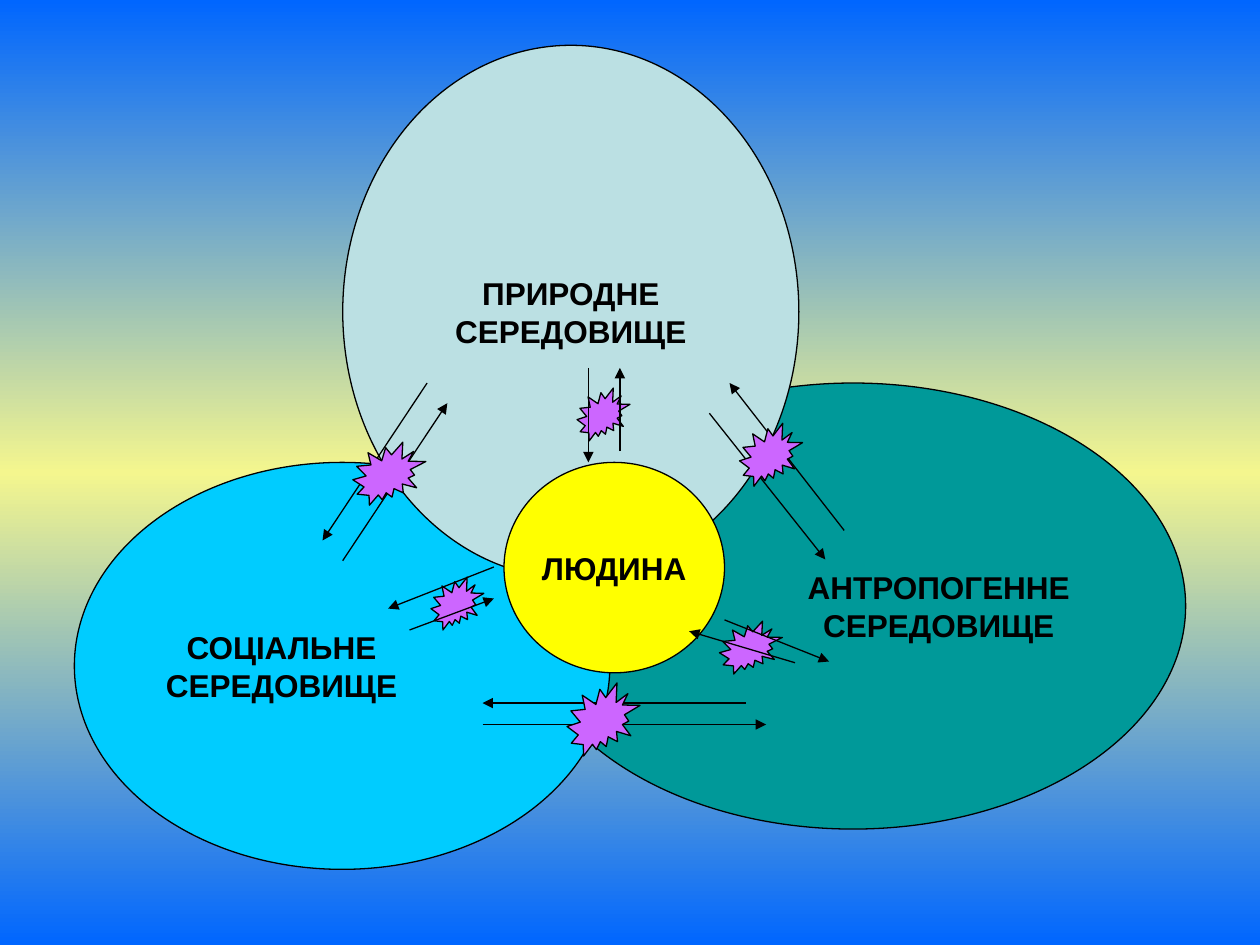
from copy import deepcopy
from dataclasses import dataclass

from lxml.etree import SubElement
from pptx import Presentation
from pptx.dml.color import RGBColor
from pptx.enum.shapes import MSO_CONNECTOR, MSO_SHAPE
from pptx.enum.text import MSO_ANCHOR, PP_ALIGN
from pptx.oxml.ns import qn
from pptx.util import Inches, Pt


@dataclass(frozen=True)
class Theme:
    """Colours, font and sizes of the slide."""
    edge: str = "0066FF"
    glow: str = "F4F68E"
    ink: str = "000000"
    teal: str = "009999"
    sky: str = "00CCFF"
    pale: str = "BBE0E3"
    sun: str = "FFFF00"
    burst: str = "CC66FF"
    font: str = "Arial"
    size: float = 18
    line: float = 0.75


THEME = Theme()

CROSS = [
    (3.83, 5.75, 6.08, 5.75), (5.92, 5.58, 3.83, 5.58),
    (3.39, 3.04, 2.56, 4.29), (2.72, 4.45, 3.55, 3.2),
    (5.63, 3.28, 6.55, 4.44), (6.7, 4.21, 5.79, 3.04),
]
INNER = [
    (4.67, 2.92, 4.67, 3.67), (4.92, 3.58, 4.92, 2.92),
    (3.92, 4.5, 3.08, 4.83), (3.25, 5, 3.92, 4.75),
    (5.75, 4.92, 6.58, 5.25), (6.31, 5.26, 5.47, 5.01),
]
BURSTS = [
    (4.5, 5.42, 0.58, 0.58), (5.87, 3.36, 0.5, 0.5),
    (2.8, 3.51, 0.58, 0.5), (3.42, 4.58, 0.42, 0.42),
    (5.71, 4.93, 0.5, 0.42), (4.58, 3.08, 0.42, 0.42),
]


def paint(slide):
    """Fill the background with a vertical gradient of three stops."""
    fill = slide.background.fill
    fill.gradient()
    fill.gradient_angle = 90
    for stop, place in zip(fill.gradient_stops, (0, 1)):
        stop.color.rgb = RGBColor.from_string(THEME.edge)
        stop.position = place
    stops = slide.element.xpath(".//p:bg//a:gsLst")[0]
    stops.insert(1, deepcopy(stops[0]))
    middle = fill.gradient_stops[1]
    middle.color.rgb = RGBColor.from_string(THEME.glow)
    middle.position = 0.5


def add_form(slide, kind, box, color):
    """Add a filled preset shape with a thin outline."""
    form = slide.shapes.add_shape(kind, *map(Inches, box))
    form.shadow.inherit = False
    form.fill.solid()
    form.fill.fore_color.rgb = RGBColor.from_string(color)
    form.line.color.rgb = RGBColor.from_string(THEME.ink)
    form.line.width = Pt(THEME.line)
    return form


def add_sphere(slide, box, color, text, left=0.1, right=0.1):
    """Add an ellipse with a bold label, moved sideways by its margins."""
    frame = add_form(slide, MSO_SHAPE.OVAL, box, color).text_frame
    frame.word_wrap = False
    frame.vertical_anchor = MSO_ANCHOR.MIDDLE
    frame.margin_left, frame.margin_right = Inches(left), Inches(right)
    frame.text = text
    for para in frame.paragraphs:
        para.alignment = PP_ALIGN.CENTER
        for run in para.runs:
            run.font.name = THEME.font
            run.font.size = Pt(THEME.size)
            run.font.bold = True
            run.font.color.rgb = RGBColor.from_string(THEME.ink)


def add_arrow(slide, ends):
    """Add a thin straight arrow."""
    arrow = slide.shapes.add_connector(MSO_CONNECTOR.STRAIGHT, *map(Inches, ends))
    arrow.line.color.rgb = RGBColor.from_string(THEME.ink)
    arrow.line.width = Pt(THEME.line)
    props = arrow.element.spPr
    SubElement(props.find(qn("a:ln")), qn("a:tailEnd"), type="triangle")
    SubElement(props, qn("a:effectLst"))


def main():
    """Build and save the slide."""
    deck = Presentation()
    deck.slide_width, deck.slide_height = Inches(10), Inches(7.5)
    slide = deck.slides.add_slide(deck.slide_layouts[6])
    paint(slide)
    add_sphere(slide, (4.13, 3.04, 5.28, 3.54), THEME.teal,
               "АНТРОПОГЕННЕ\nСЕРЕДОВИЩЕ", left=1.46)
    add_sphere(slide, (0.59, 3.67, 4.25, 3.23), THEME.sky,
               "СОЦІАЛЬНЕ\nСЕРЕДОВИЩЕ", right=1.06)
    add_sphere(slide, (2.72, 0.36, 3.62, 4.23), THEME.pale,
               "ПРИРОДНЕ\nСЕРЕДОВИЩЕ")
    add_sphere(slide, (4, 3.67, 1.75, 1.67), THEME.sun, "ЛЮДИНА")
    for ends in CROSS:
        add_arrow(slide, ends)
    for box in BURSTS:
        add_form(slide, MSO_SHAPE.EXPLOSION2, box, THEME.burst)
    for ends in INNER:
        add_arrow(slide, ends)
    deck.save("out.pptx")


if __name__ == "__main__":
    main()
